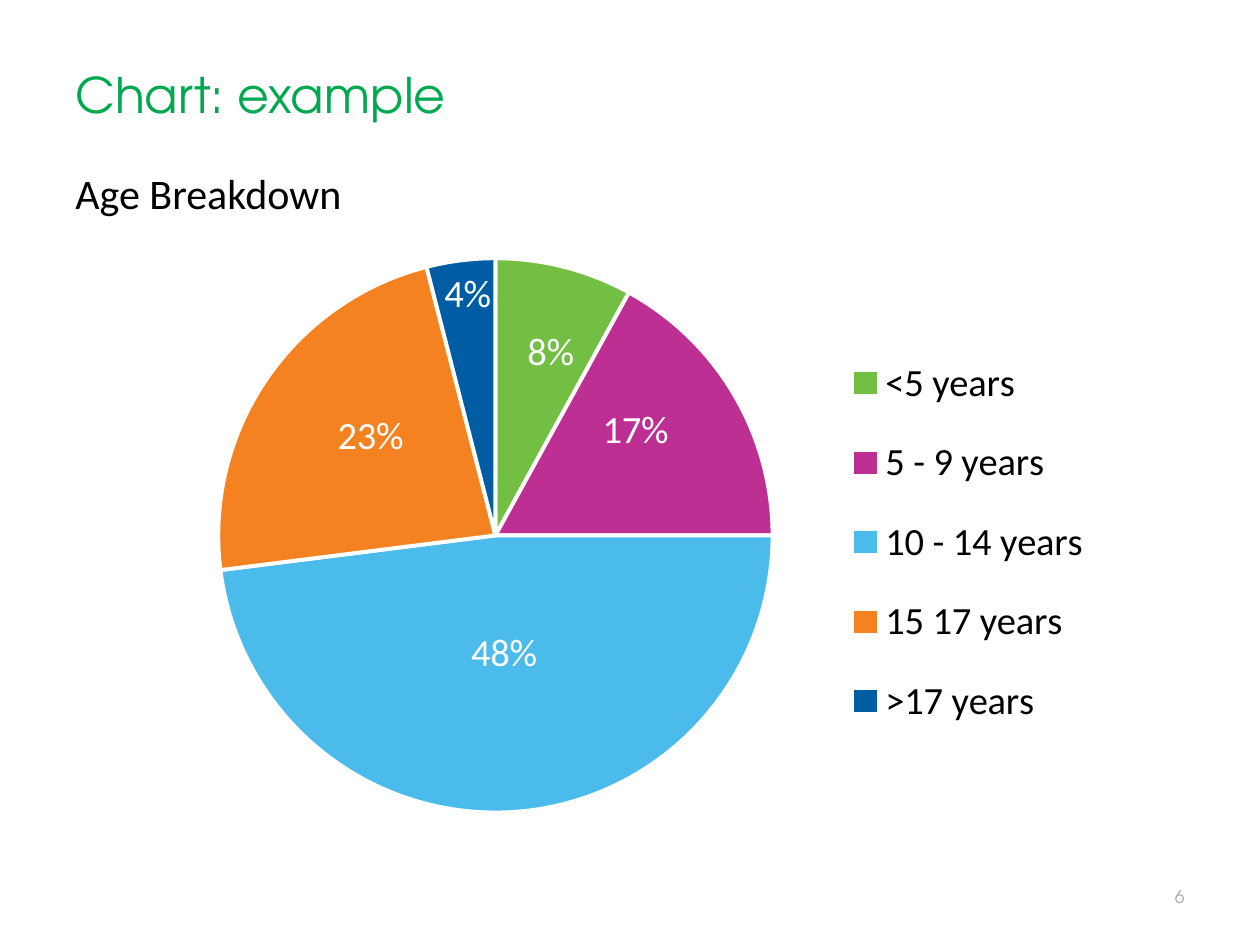
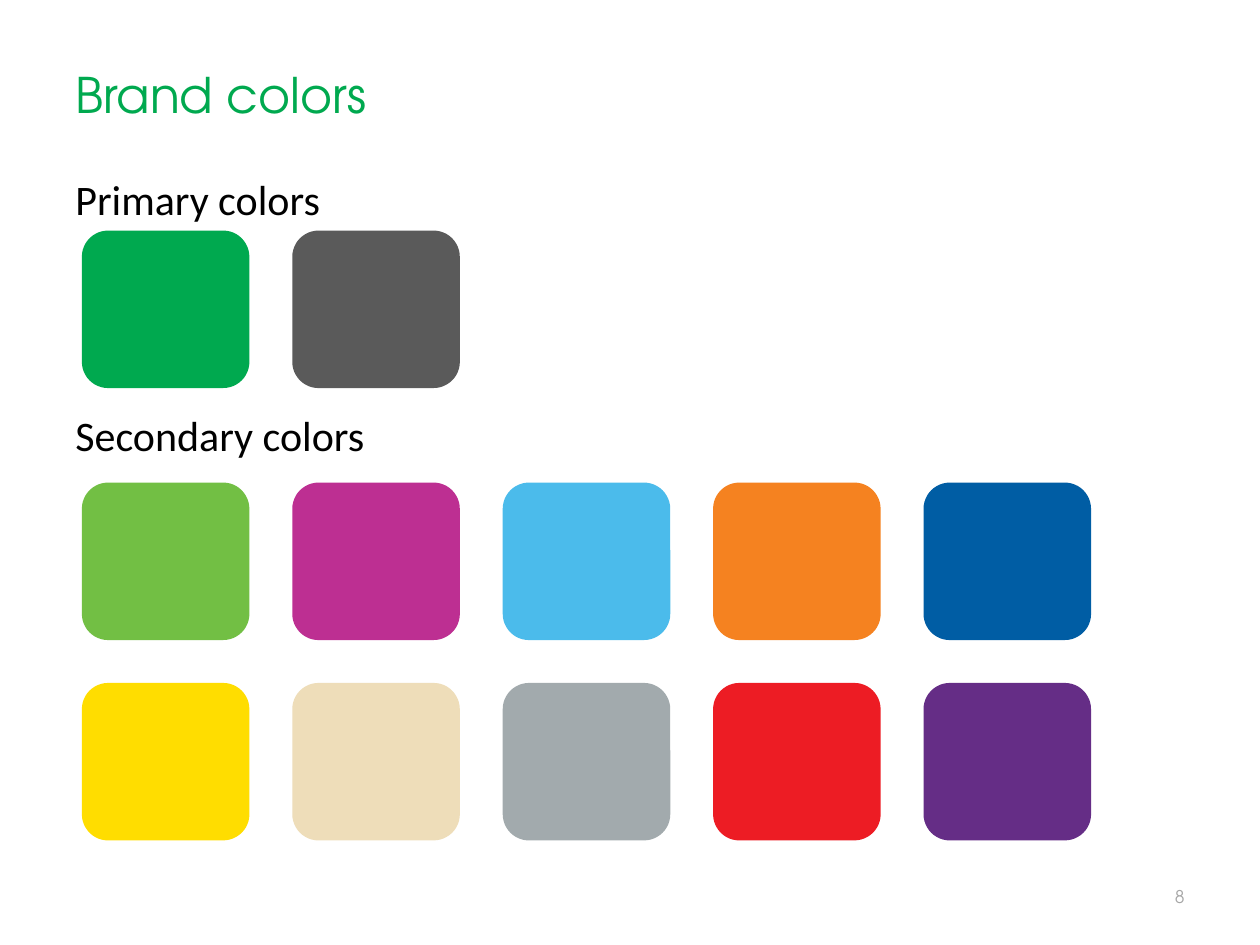
from lxml import etree
from pptx import Presentation
from pptx.chart.data import CategoryChartData
from pptx.dml.color import RGBColor
from pptx.enum.chart import XL_CHART_TYPE, XL_LABEL_POSITION, XL_LEGEND_POSITION
from pptx.enum.shapes import MSO_SHAPE
from pptx.enum.text import MSO_ANCHOR, PP_ALIGN
from pptx.oxml.ns import qn
from pptx.util import Inches, Pt

PIE = XL_CHART_TYPE.PIE
CENTER = XL_LABEL_POSITION.CENTER
LEGEND_RIGHT = XL_LEGEND_POSITION.RIGHT
ROUNDED = MSO_SHAPE.ROUNDED_RECTANGLE
TOP, MIDDLE, BOTTOM = MSO_ANCHOR.TOP, MSO_ANCHOR.MIDDLE, MSO_ANCHOR.BOTTOM
LEFT, RIGHT = PP_ALIGN.LEFT, PP_ALIGN.RIGHT

DISPLAY_FONT, BODY_FONT = "TeX Gyre Adventor", "Calibri"
GREEN, CHARCOAL, PAGE_GRAY = "00A94F", "5A5A5A", "A6A6A6"
BLACK, WHITE = "000000", "FFFFFF"
BRIGHTS = ["72BF44", "BD2F92", "4BBBEB", "F58220", "005DA4"]
ACCENTS = ["FFDD00", "EEDDB9", "A2AAAD", "ED1C24", "652D86"]

AGE_SHARES = {
    "<5 years": 0.08,
    "5 - 9 years": 0.17,
    "10 - 14 years": 0.48,
    "15 17 years": 0.23,
    ">17 years": 0.04,
}
LABEL_SHIFTS = [(0.02, -0.07), (0.02, -0.05), (0, -0.03), (-0.01, -0.03), (-0.01, -0.15)]


def rgb(color):
    """Turn a hex string into a colour."""
    return RGBColor.from_string(color)


def style_font(font, size, color, name=BODY_FONT):
    """Set size, colour and typeface of a font."""
    font.size = Pt(size)
    font.color.rgb = rgb(color)
    font.name = name


def add_text(slide, box, text, size, color, name=BODY_FONT, anchor=TOP, align=LEFT):
    """Place one line of text in a box given in inches."""
    frame = slide.shapes.add_textbox(*map(Inches, box)).text_frame
    frame.word_wrap = True
    frame.vertical_anchor = anchor
    frame.text = text
    line = frame.paragraphs[0]
    line.alignment = align
    style_font(line.runs[0].font, size, color, name)


def add_heading(slide, top, text):
    """Place a section heading at the left margin."""
    add_text(slide, (0.5, top, 9, 0.5), text, 24, BLACK)


def add_page(deck, title, number):
    """Add a slide with the shared title and page number."""
    slide = deck.slides.add_slide(deck.slide_layouts[6])
    add_text(slide, (0.5, 0.16, 9, 0.87), title, 28, GREEN, DISPLAY_FONT, BOTTOM)
    add_text(slide, (8.67, 6.98, 0.83, 0.27), number, 10, PAGE_GRAY,
             DISPLAY_FONT, MIDDLE, RIGHT)
    return slide


def make_layout(**settings):
    """Build a manual chart layout from its settings."""
    layout = etree.Element(qn("c:layout"))
    manual = etree.SubElement(layout, qn("c:manualLayout"))
    for key, value in settings.items():
        etree.SubElement(manual, qn("c:" + key)).set("val", str(value))
    return layout


def set_layout(parent, layout, follows=None):
    """Put a layout into a chart part after the named child, or first."""
    for old in parent.findall(qn("c:layout")):
        parent.remove(old)
    if follows:
        parent.find(qn(follows)).addnext(layout)
    else:
        parent.insert(0, layout)


def style_slices(series):
    """Colour the slices and place their percentages."""
    for index, color in enumerate(BRIGHTS):
        point = series.points[index]
        point.format.fill.solid()
        point.format.fill.fore_color.rgb = rgb(color)
        point.format.line.color.rgb = rgb(WHITE)
        point.format.line.width = Pt(2.25)
        style_font(point.data_label.font, 22, WHITE)
        point.data_label.position = CENTER
    labels = series._element.findall(".//" + qn("c:dLbl"))
    for label, (x, y) in zip(labels, LABEL_SHIFTS):
        set_layout(label, make_layout(x=x, y=y), "c:idx")


def add_age_pie(slide, box):
    """Draw the age breakdown with a legend at its right."""
    data = CategoryChartData(number_format="0%")
    data.categories = list(AGE_SHARES)
    data.add_series("Series 1", list(AGE_SHARES.values()))
    chart = slide.shapes.add_chart(PIE, *map(Inches, box), data).chart
    style_font(chart.font, 18, BLACK)
    chart.has_title = False
    chart.has_legend = True
    legend = chart.legend
    legend.position = LEGEND_RIGHT
    legend.include_in_layout = False
    style_font(legend.font, 22, BLACK)
    set_layout(legend._element, make_layout(
        xMode="edge", yMode="edge", x=0.7, y=0.2, w=0.25, h=0.62), "c:legendPos")
    plot = chart.plots[0]
    plot.vary_by_categories = True
    plot.has_data_labels = True
    labels = plot.data_labels
    labels.show_value = True
    labels.show_percentage = False
    labels.number_format = "0%"
    labels.number_format_is_linked = False
    style_font(labels.font, 22, WHITE)
    set_layout(chart._chartSpace.chart.plotArea, make_layout(
        layoutTarget="inner", xMode="edge", yMode="edge",
        x=0.1, y=0.1, w=0.54, h=0.8))
    style_slices(plot.series[0])


def add_swatches(slide, top, colors):
    """Lay out one row of evenly spaced colour swatches."""
    for column, color in enumerate(colors):
        box = (0.65 + 1.67 * column, top, 1.33, 1.25)
        swatch = slide.shapes.add_shape(ROUNDED, *map(Inches, box))
        swatch.shadow.inherit = False
        swatch.fill.solid()
        swatch.fill.fore_color.rgb = rgb(color)
        swatch.line.fill.background()


def build_chart_slide(deck):
    """Build the slide with the age chart."""
    slide = add_page(deck, "Chart: example", "6")
    add_heading(slide, 1.28, "Age Breakdown")
    add_age_pie(slide, (0.88, 1.5, 8.25, 5.5))


def build_color_slide(deck):
    """Build the slide with the brand palette."""
    slide = add_page(deck, "Brand colors", "8")
    add_heading(slide, 1.33, "Primary colors")
    add_swatches(slide, 1.83, [GREEN, CHARCOAL])
    add_heading(slide, 3.2, "Secondary colors")
    add_swatches(slide, 3.83, BRIGHTS)
    add_swatches(slide, 5.42, ACCENTS)


def main():
    """Build and save the two slides."""
    deck = Presentation()
    deck.slide_width, deck.slide_height = Inches(10), Inches(7.5)
    build_chart_slide(deck)
    build_color_slide(deck)
    deck.save("out.pptx")


if __name__ == "__main__":
    main()
